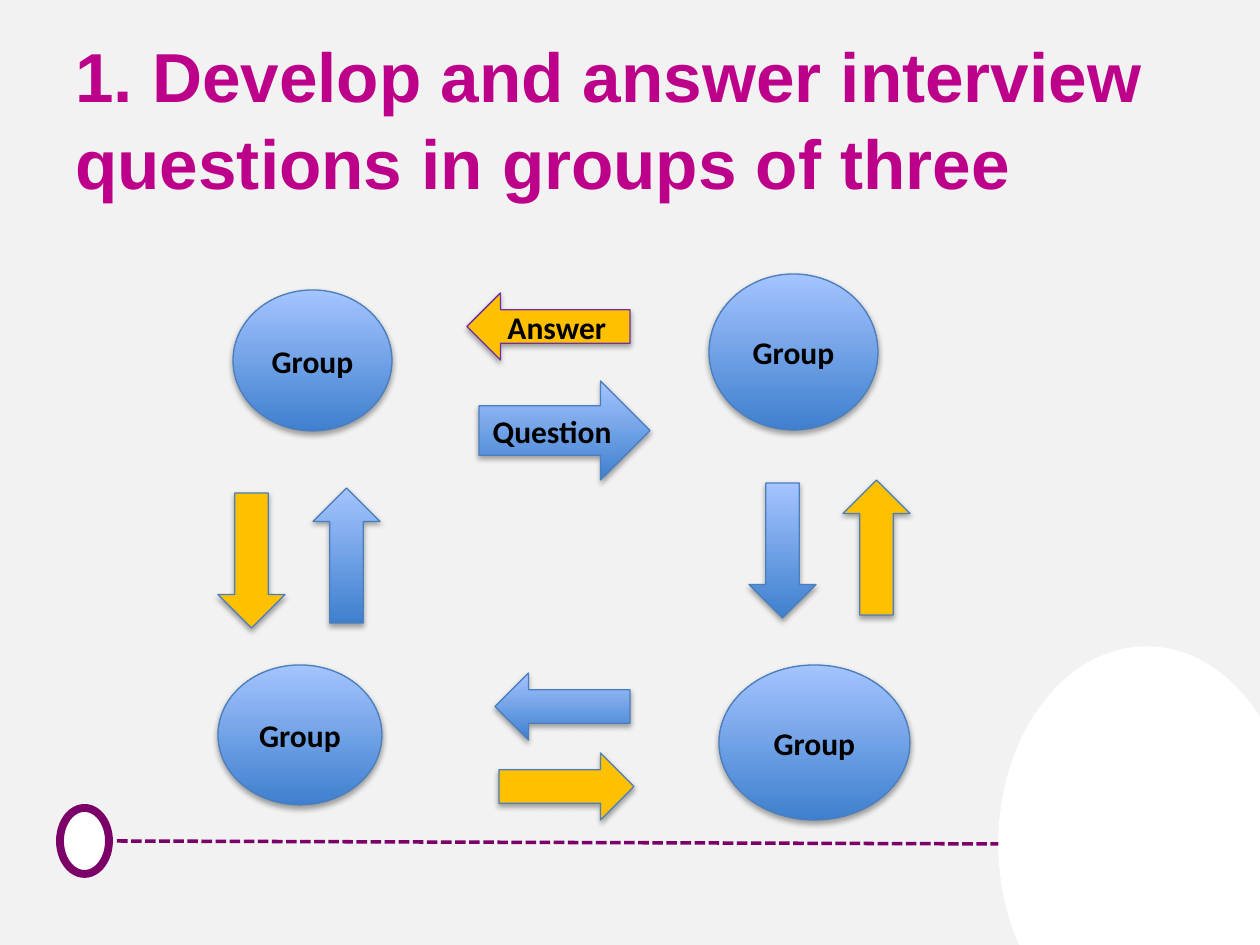
import pptx
import pptx.dml.color
import pptx.enum.dml
import pptx.enum.shapes
import pptx.enum.text
import pptx.oxml
import pptx.oxml.ns
import pptx.util

RGB = pptx.dml.color.RGBColor
KIND = pptx.enum.shapes.MSO_SHAPE
ALIGN = pptx.enum.text.PP_ALIGN
PX = 914400 // 126

WHITE = RGB(0xFF, 0xFF, 0xFF)
BLACK = RGB(0x00, 0x00, 0x00)
GREY = RGB(0xF2, 0xF2, 0xF2)
PLUM = RGB(0x7B, 0x00, 0x68)
PINK = RGB(0xBD, 0x00, 0x89)
DEEP = RGB(0x3F, 0x80, 0xCE)
PALE = RGB(0xA4, 0xC4, 0xFF)
EDGE = RGB(0x4B, 0x7E, 0xBC)
GOLD = RGB(0xFF, 0xC0, 0x00)
VIOLET = RGB(0x70, 0x30, 0xA0)
BLUE = (DEEP, PALE)  # gradient from bottom to top

TITLE = "1. Develop and answer interview questions in groups of three"
TITLE_BOX = (63, 38, 1134, 157)
TITLE_FONT = {"name": "Arial", "size": pptx.util.Pt(39.6), "bold": True}
LABEL_FONT = {"name": "Calibri", "size": pptx.util.Pt(18), "bold": True}

# kind, box, fill, line colour, line width
PAGE = (KIND.RECTANGLE, (0, 0, 1260, 945), GREY, GREY, 0.75)
RAIL = (117, 841, 1004, 844)
ENDS = [
    (KIND.OVAL, (999, 647, 295, 394), WHITE, WHITE, 0.75),
    (KIND.OVAL, (60, 808, 49, 66), WHITE, PLUM, 4.5),
]

GROUPS = [
    (233, 290, 159, 141),
    (709, 274, 169, 156),
    (719, 665, 191, 155),
    (218, 665, 164, 140),
]
# kind, box, fill, line colour, label
ARROWS = [
    (KIND.RIGHT_ARROW, (479, 381, 171, 99), BLUE, EDGE, "Question"),
    (KIND.LEFT_ARROW, (467, 293, 163, 67), GOLD, VIOLET, "Answer"),
    (KIND.DOWN_ARROW, (749, 483, 67, 135), BLUE, EDGE, ""),
    (KIND.UP_ARROW, (843, 480, 67, 135), GOLD, EDGE, ""),
    (KIND.LEFT_ARROW, (495, 673, 135, 67), BLUE, EDGE, ""),
    (KIND.RIGHT_ARROW, (499, 753, 135, 67), GOLD, EDGE, ""),
    (KIND.UP_ARROW, (313, 488, 67, 135), BLUE, EDGE, ""),
    (KIND.DOWN_ARROW, (218, 493, 67, 135), GOLD, EDGE, ""),
]

SHADOW = (
    '<a:outerShdw %s blurRad="40000" dist="23000" dir="5400000" rotWithShape="0">'
    '<a:srgbClr val="000000"><a:alpha val="35000"/></a:srgbClr></a:outerShdw>'
    % pptx.oxml.ns.nsdecls("a")
)


def scale(box):
    return [n * PX for n in box]


def write(frame, text, form, color, align):
    frame.word_wrap = True
    frame.vertical_anchor = pptx.enum.text.MSO_ANCHOR.MIDDLE
    para = frame.paragraphs[0]
    para.alignment = align
    run = para.add_run()
    run.text = text
    for key, value in form.items():
        setattr(run.font, key, value)
    run.font.color.rgb = color
    return para


def draw(slide, kind, box, fill, line, width):
    shape = slide.shapes.add_shape(kind, *scale(box))
    shape.shadow.inherit = False
    if fill == BLUE:
        shape.fill.gradient()
        shape.fill.gradient_angle = 90
        for stop, color in zip(shape.fill.gradient_stops, fill):
            stop.color.rgb = color
    else:
        shape.fill.solid()
        shape.fill.fore_color.rgb = fill
    shape.line.color.rgb = line
    shape.line.width = pptx.util.Pt(width)
    return shape


def draw_rail(slide):
    rail = slide.shapes.add_connector(
        pptx.enum.shapes.MSO_CONNECTOR.STRAIGHT, *scale(RAIL))
    rail.line.color.rgb = PLUM
    rail.line.width = pptx.util.Pt(2)
    rail.line.dash_style = pptx.enum.dml.MSO_LINE.SQUARE_DOT
    rail._element.spPr.append(
        pptx.oxml.parse_xml("<a:effectLst %s/>" % pptx.oxml.ns.nsdecls("a")))


def draw_node(slide, kind, box, fill, line, label):
    """Add a circle or arrow with a soft shadow and, if given, a label."""
    shape = draw(slide, kind, box, fill, line, 0.75)
    effects = shape._element.spPr.find(pptx.oxml.ns.qn("a:effectLst"))
    effects.append(pptx.oxml.parse_xml(SHADOW))
    if label:
        write(shape.text_frame, label, LABEL_FONT, BLACK, ALIGN.CENTER)


def main():
    deck = pptx.Presentation()
    deck.slide_width, deck.slide_height = scale((1260, 945))
    slide = deck.slides.add_slide(deck.slide_layouts[6])

    draw(slide, *PAGE)
    draw_rail(slide)
    for end in ENDS:
        draw(slide, *end)

    title = slide.shapes.add_textbox(*scale(TITLE_BOX))
    para = write(title.text_frame, TITLE, TITLE_FONT, PINK, ALIGN.LEFT)
    para.line_spacing = 1.05

    for box in GROUPS:
        draw_node(slide, KIND.OVAL, box, BLUE, EDGE, "Group")
    for arrow in ARROWS:
        draw_node(slide, *arrow)

    deck.save("out.pptx")


if __name__ == "__main__":
    main()
